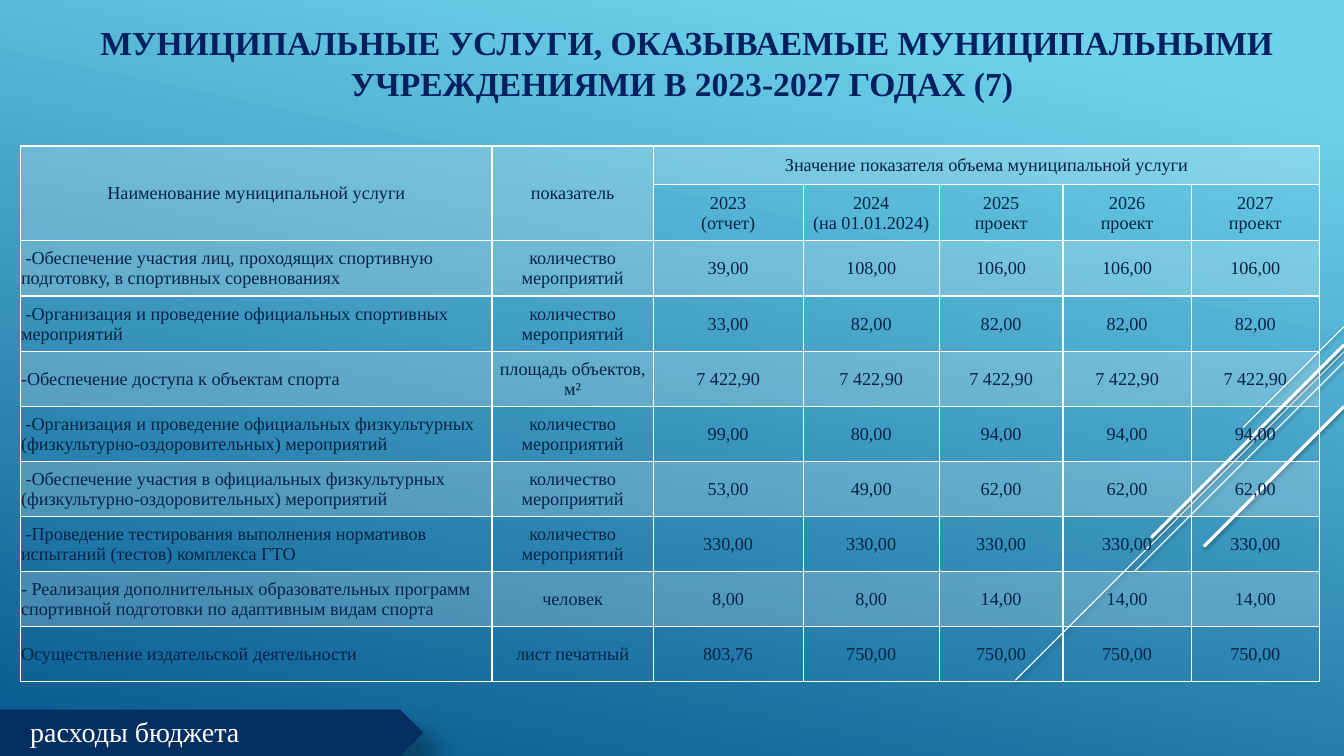
"""Builds a slide with a table of municipal services for 2023-2027."""
import pptx
import pptx.dml.color
import pptx.enum.shapes
import pptx.enum.text
import pptx.oxml
import pptx.oxml.ns
import pptx.util

Cm = pptx.util.Cm
Pt = pptx.util.Pt
RGBColor = pptx.dml.color.RGBColor
ALIGN = pptx.enum.text.PP_ALIGN
ANCHOR = pptx.enum.text.MSO_ANCHOR
NAMESPACE = pptx.oxml.ns.nsdecls("a")

WHITE = RGBColor(0xFF, 0xFF, 0xFF)
BLACK = RGBColor(0x00, 0x00, 0x00)
SKY = RGBColor(0x6E, 0xD2, 0xEB)
DEEP_BLUE = RGBColor(0x06, 0x58, 0x8E)
TITLE_BLUE = RGBColor(0x00, 0x20, 0x60)
TABLE_INK = RGBColor(0x04, 0x23, 0x49)
NAVY = RGBColor(0x05, 0x2F, 0x61)

PAGE_WIDTH, PAGE_HEIGHT = 33.87, 19.05
STRIPES = [(8.23, 2.54, 0.75), (8.86, 8.28, 0.75), (9.12, 5.27, 0.75),
           (8.69, 4.86, 2.25), (10.24, 3.53, 2.25)]
COLUMN_WIDTHS = [11.89, 4.06, 3.78, 3.43, 3.12, 3.23, 3.23]
ROW_HEIGHTS = [0.97, 1.42] + [1.39] * 8
MERGES = [((0, 0), (1, 0)), ((0, 1), (1, 1)), ((0, 2), (0, 6))]
EVENTS = "количество мероприятий"
ROWS = [
    ["Наименование муниципальной услуги", "показатель",
     "Значение показателя объема муниципальной услуги", "", "", "", ""],
    ["", "", "2023\n(отчет)", "2024\n(на 01.01.2024)",
     "2025\vпроект", "2026\vпроект", "2027\vпроект"],
    [" -Обеспечение участия лиц, проходящих спортивную подготовку, в спортивных соревнованиях",
     EVENTS, "39,00", "108,00", "106,00", "106,00", "106,00"],
    [" -Организация и проведение официальных спортивных мероприятий",
     EVENTS, "33,00", "82,00", "82,00", "82,00", "82,00"],
    ["-Обеспечение доступа к объектам спорта", "площадь объектов, м²"] + ["7 422,90"] * 5,
    [" -Организация и проведение официальных физкультурных "
     "(физкультурно-оздоровительных) мероприятий",
     EVENTS, "99,00", "80,00", "94,00", "94,00", "94,00"],
    [" -Обеспечение участия в официальных физкультурных "
     "(физкультурно-оздоровительных) мероприятий",
     EVENTS, "53,00", "49,00", "62,00", "62,00", "62,00"],
    [" -Проведение тестирования выполнения нормативов испытаний (тестов) комплекса ГТО",
     EVENTS] + ["330,00"] * 5,
    ["- Реализация дополнительных образовательных программ "
     "спортивной подготовки по адаптивным видам спорта",
     "человек", "8,00", "8,00", "14,00", "14,00", "14,00"],
    ["Осуществление издательской деятельности", "лист печатный",
     "803,76", "750,00", "750,00", "750,00", "750,00"],
]


class SlideBuilder:
    """Holds the text style and the slide being drawn."""

    def __init__(self, page, font_name):
        self.page = page
        self.font_name = font_name

    def background(self, start, end, angle):
        fill = self.page.background.fill
        fill.gradient()
        fill.gradient_angle = 360 - angle
        for stop, color, position in zip(fill.gradient_stops, (start, end), (0.1, 1)):
            stop.color.rgb = color
            stop.position = position

    def style(self, para, size, color, align, bold=False):
        para.alignment = align
        para.font.name = self.font_name
        para.font.size = Pt(size)
        para.font.color.rgb = color
        para.font.bold = bold

    def shadow(self, shape, alpha, blur, distance, angle):
        shape._element.spPr.append(pptx.oxml.parse_xml(
            f'<a:effectLst {NAMESPACE}><a:outerShdw blurRad="{Pt(blur)}" '
            f'dist="{Pt(distance)}" dir="{angle * 60000}" algn="tl" rotWithShape="0">'
            f'<a:srgbClr val="{BLACK}"><a:alpha val="{alpha * 1000}"/></a:srgbClr>'
            '</a:outerShdw></a:effectLst>'))

    def stripe(self, top, reach, weight):
        line = self.page.shapes.add_connector(
            pptx.enum.shapes.MSO_CONNECTOR.STRAIGHT, Cm(PAGE_WIDTH), Cm(top),
            Cm(PAGE_WIDTH - reach), Cm(top + reach))
        line.line.color.rgb = WHITE
        line.line.width = Pt(weight)
        self.shadow(line, 38, 3.1, 1.6, 90)

    def text(self, left, top, width, height, words, size, color,
             align=ALIGN.LEFT, anchor=ANCHOR.TOP, bold=False, indent=0):
        box = self.page.shapes.add_textbox(Cm(left), Cm(top), Cm(width), Cm(height))
        frame = box.text_frame
        frame.word_wrap = True
        frame.vertical_anchor = anchor
        frame.text = words
        para = frame.paragraphs[0]
        self.style(para, size, color, align, bold)
        if indent:
            para._p.get_or_add_pPr().set("indent", str(Cm(indent)))

    def ribbon(self, left, top, width, height):
        plate = self.page.shapes.add_shape(
            pptx.enum.shapes.MSO_SHAPE.PENTAGON, Cm(left), Cm(top), Cm(width), Cm(height))
        plate.adjustments[0] = 0.5
        plate.fill.solid()
        plate.fill.fore_color.rgb = NAVY
        plate.line.fill.background()
        self.shadow(plate, 30, 15, 18, 45)

    def cell(self, cell, words, align, shaded):
        cell.text = words
        cell.vertical_anchor = ANCHOR.MIDDLE
        cell.margin_left = cell.margin_right = cell.margin_top = Cm(0.02)
        cell.margin_bottom = 0
        for para in cell.text_frame.paragraphs:
            self.style(para, 13, TABLE_INK, align)
        properties = cell._tc.get_or_add_tcPr()
        if shaded:
            cell.fill.solid()
            cell.fill.fore_color.rgb = WHITE
            tint = properties.find(".//" + pptx.oxml.ns.qn("a:srgbClr"))
            tint.append(pptx.oxml.parse_xml(f'<a:alpha {NAMESPACE} val="20000"/>'))
        else:
            cell.fill.background()
        for index, side in enumerate(("lnL", "lnR", "lnT", "lnB")):
            properties.insert(index, pptx.oxml.parse_xml(
                f'<a:{side} {NAMESPACE} w="{Pt(1)}"><a:solidFill>'
                f'<a:srgbClr val="{WHITE}"/></a:solidFill></a:{side}>'))

    def table(self, left, top, widths, heights, rows, merges):
        table = self.page.shapes.add_table(
            len(rows), len(widths), Cm(left), Cm(top),
            Cm(sum(widths)), Cm(sum(heights))).table
        table.first_row = table.horz_banding = False
        for column, width in zip(table.columns, widths):
            column.width = Cm(width)
        for row, height in zip(table.rows, heights):
            row.height = Cm(height)
        for r, row in enumerate(rows):
            for c, words in enumerate(row):
                align = ALIGN.LEFT if c == 0 and r > 1 else ALIGN.CENTER
                self.cell(table.cell(r, c), words, align, r % 2 == 0)
        for first, last in merges:
            table.cell(*first).merge(table.cell(*last))


def main():
    deck = pptx.Presentation()
    deck.slide_width, deck.slide_height = Cm(PAGE_WIDTH), Cm(PAGE_HEIGHT)
    page = deck.slides.add_slide(deck.slide_layouts[6])
    builder = SlideBuilder(page, "Times New Roman")
    builder.background(SKY, DEEP_BLUE, 102)
    for stripe in STRIPES:
        builder.stripe(*stripe)
    builder.text(0.51, 0.36, 33.35, 2.36,
                 "МУНИЦИПАЛЬНЫЕ УСЛУГИ, ОКАЗЫВАЕМЫЕ МУНИЦИПАЛЬНЫМИ "
                 "УЧРЕЖДЕНИЯМИ В 2023-2027 ГОДАХ (7)",
                 24, TITLE_BLUE, ALIGN.CENTER, ANCHOR.BOTTOM, bold=True, indent=0.25)
    builder.table(0.51, 3.68, COLUMN_WIDTHS, ROW_HEIGHTS, ROWS, MERGES)
    builder.ribbon(0, 17.88, 10.67, 1.17)
    builder.text(0.51, 17.88, 9.6, 1.12, "расходы бюджета", 20, WHITE)
    deck.save("out.pptx")


if __name__ == "__main__":
    main()
